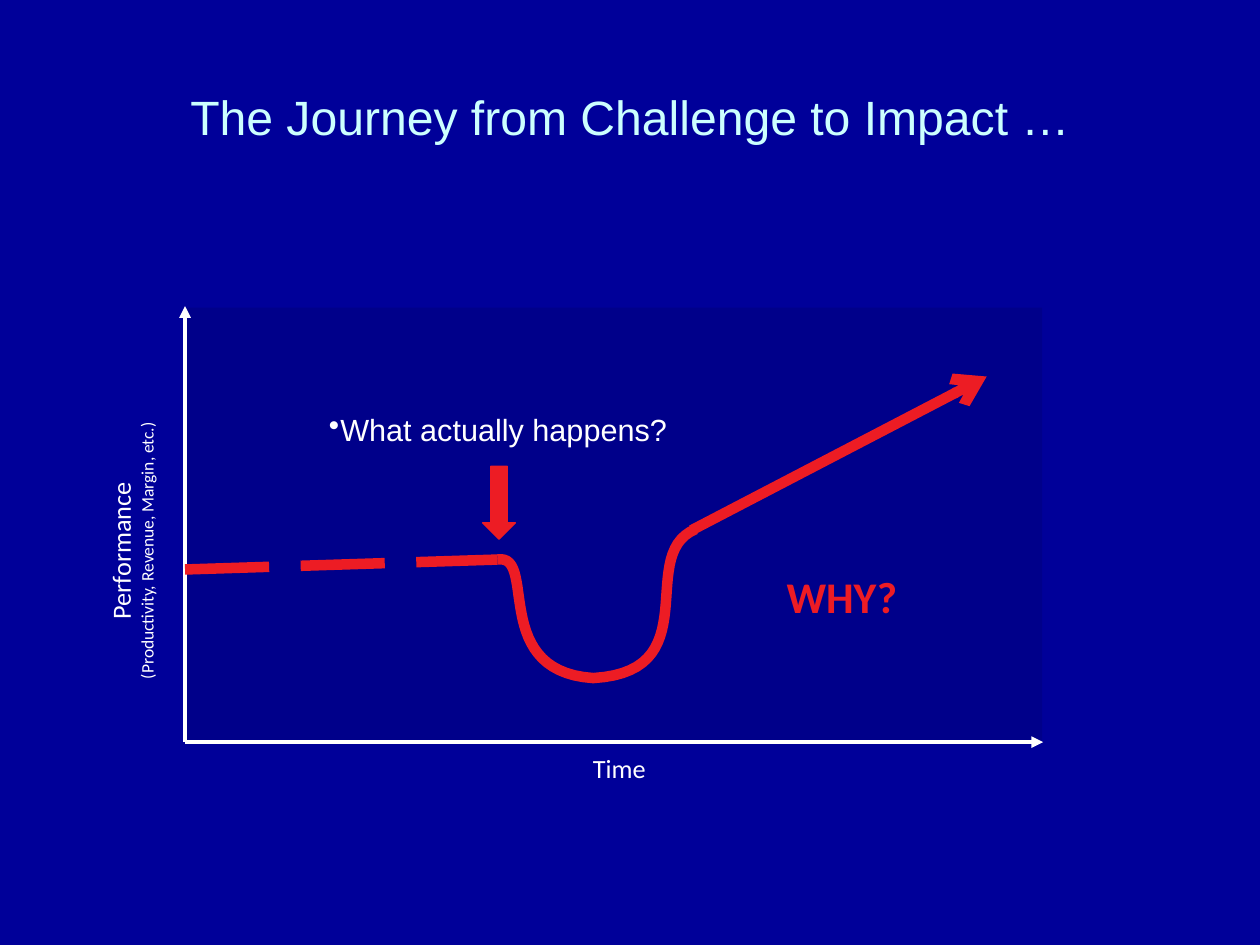
from lxml import etree
from pptx import Presentation
from pptx.dml.color import RGBColor
from pptx.enum import dml, shapes, text
from pptx.oxml import ns
from pptx.util import Cm, Pt

NAVY = RGBColor(0x00, 0x00, 0x99)
PANEL = RGBColor(0x00, 0x00, 0x82)
ICE = RGBColor(0xCC, 0xFF, 0xFF)
WHITE = RGBColor(0xFF, 0xFF, 0xFF)
RED = RGBColor(0xED, 0x1C, 0x24)

ORIGIN = (3.73, 14.96)
DIP_START = (10.03, 11.28)
DIP_CURVES = [
    [DIP_START, (10.85, 11.15), (9.86, 13.54), (11.96, 13.67)],
    [(11.96, 13.67), (14.3, 13.54), (12.8, 11.18), (14.02, 10.67)],
]
CURVE_STEPS = 30


def add_line(slide, start, end, color, width, arrow=None, dash=None):
    line = slide.shapes.add_connector(
        shapes.MSO_CONNECTOR.STRAIGHT, *map(Cm, start + end))
    line.line.color.rgb = color
    line.line.width = Pt(width)
    if dash:
        line.line.dash_style = dash
    if arrow:
        outline = line.line._get_or_add_ln()
        etree.SubElement(outline, ns.qn("a:tailEnd"), type=arrow)
    etree.SubElement(line._element.spPr, ns.qn("a:effectLst"))


def add_block(slide, kind, box, color, alpha=None):
    block = slide.shapes.add_shape(kind, *map(Cm, box))
    block.shadow.inherit = False
    block.fill.solid()
    block.fill.fore_color.rgb = color
    block.line.fill.background()
    if alpha:
        fill_color = block._element.spPr.find(".//" + ns.qn("a:srgbClr"))
        etree.SubElement(fill_color, ns.qn("a:alpha"), val=str(alpha * 1000))
    return block


def add_run(paragraph, words, size, font, color, bold=False):
    run = paragraph.add_run()
    run.text = words
    run.font.size = Pt(size)
    run.font.name = font
    run.font.color.rgb = color
    run.font.bold = bold


def add_label(slide, box, lines, font="Calibri", color=WHITE, bold=False,
              wrap=False, bullet=False, rotation=0):
    label = slide.shapes.add_textbox(*map(Cm, box))
    label.rotation = rotation
    frame = label.text_frame
    frame.word_wrap = wrap
    for index, (words, size) in enumerate(lines):
        paragraph = frame.add_paragraph() if index else frame.paragraphs[0]
        paragraph.alignment = text.PP_ALIGN.CENTER
        if bullet:
            properties = paragraph._p.get_or_add_pPr()
            etree.SubElement(properties, ns.qn("a:buChar"), char="•")
        add_run(paragraph, words, size, font, color, bold)
    return label


def set_title(slide, words):
    title = slide.shapes.title
    title.left, title.top, title.width, title.height = map(
        Cm, (1.27, 0.76, 22.86, 3.18))
    title.text_frame.vertical_anchor = text.MSO_ANCHOR.MIDDLE
    paragraph = title.text_frame.paragraphs[0]
    paragraph.alignment = text.PP_ALIGN.CENTER
    add_run(paragraph, words, 27.5, "Arial", ICE)


def bezier_point(controls, t):
    weights = ((1 - t) ** 3, 3 * t * (1 - t) ** 2, 3 * t ** 2 * (1 - t), t ** 3)
    return tuple(Cm(sum(w * c for w, c in zip(weights, axis)))
                 for axis in zip(*controls))


def add_dip(slide):
    points = [bezier_point(curve, step / CURVE_STEPS)
              for curve in DIP_CURVES for step in range(1, CURVE_STEPS + 1)]
    builder = slide.shapes.build_freeform(*map(Cm, DIP_START))
    builder.add_line_segments(points, close=False)
    dip = builder.convert_to_shape()
    dip.shadow.inherit = False
    dip.fill.background()
    dip.line.color.rgb = RED
    dip.line.width = Pt(6)


def main():
    deck = Presentation()
    deck.slide_width, deck.slide_height = Cm(25.4), Cm(19.05)
    slide = deck.slides.add_slide(deck.slide_layouts[5])
    slide.background.fill.solid()
    slide.background.fill.fore_color.rgb = NAVY

    add_block(slide, shapes.MSO_SHAPE.RECTANGLE, (3.71, 6.2, 17.3, 8.74),
              PANEL, alpha=64)
    set_title(slide, "The Journey from Challenge to Impact …")
    add_label(slide, (6.38, 8.15, 7.34, 1.24),
              [("What actually happens?", 17.5)],
              font="Arial", wrap=True, bullet=True)

    for axis_tip in ((3.73, 6.17), (21.03, 14.96)):
        add_line(slide, ORIGIN, axis_tip, WHITE, 2.25, arrow="triangle")
    add_line(slide, (3.73, 11.48), DIP_START, RED, 6,
             dash=dml.MSO_LINE.LONG_DASH)
    add_label(slide, (11.66, 15.04, 1.65, 0.89), [("Time", 15)])

    pointer = add_block(slide, shapes.MSO_SHAPE.DOWN_ARROW,
                        (9.73, 9.4, 0.66, 1.47), RED)
    pointer.line.color.rgb = RED
    pointer.line.width = Pt(0.75)

    why = add_label(slide, (15.09, 11.4, 3.76, 1.24), [("WHY?", 25)],
                    color=RED, bold=True, wrap=True).text_frame
    why.margin_left = why.margin_right = Cm(0.15)
    why.margin_top = why.margin_bottom = Cm(0.08)

    add_line(slide, (13.94, 10.69), (19.89, 7.59), RED, 6, arrow="arrow")
    add_dip(slide)
    add_label(slide, (-0.3, 10.44, 5.89, 1.32),
              [("Performance", 15),
               ("(Productivity, Revenue, Margin, etc.)", 10)], rotation=270)
    deck.save("out.pptx")


if __name__ == "__main__":
    main()
